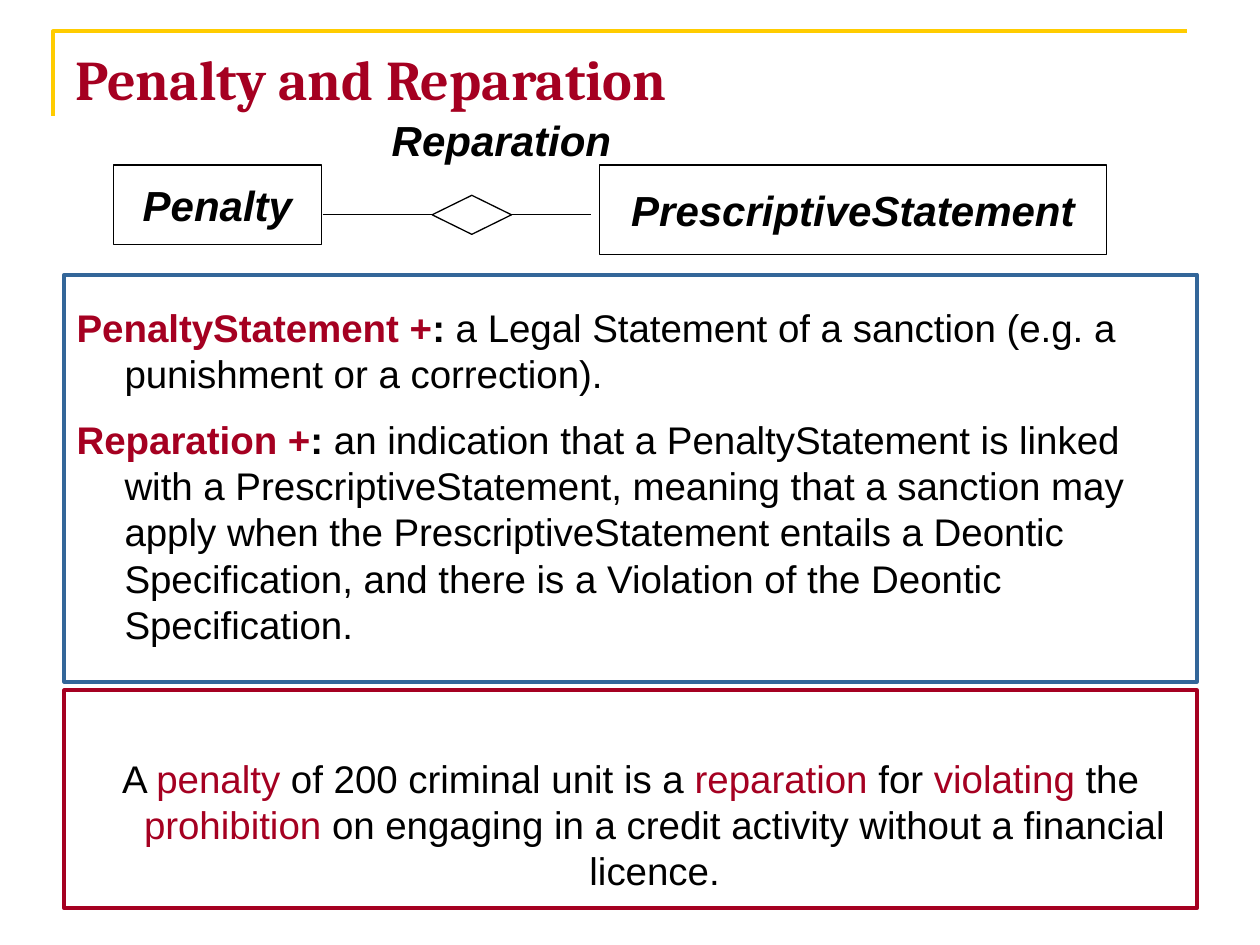
from pptx import Presentation
from pptx.dml.color import RGBColor
from pptx.enum.shapes import MSO_CONNECTOR as LINK, MSO_SHAPE as SHAPE
from pptx.enum.text import MSO_ANCHOR as ANCHOR, PP_ALIGN as ALIGN
from pptx.oxml.ns import qn
from pptx.util import Inches, Pt

RED, BLUE, GOLD, BLACK, WHITE = "A50021", "336699", "FFCC00", "000000", "FFFFFF"

TITLE = "Penalty and Reparation"
NODES = [  # text, left, top, width, height
    ("Penalty", 0.9, 1.31, 1.65, 0.63),
    ("PrescriptiveStatement", 4.76, 1.31, 4.02, 0.71),
]
LABEL = ("Reparation", 3.01, 0.86, 1.94, 0.5)
DIAMOND = (3.43, 1.55, 0.63, 0.31)
LINKS = [(2.56, 3.43), (4.06, 4.69)]
LINK_Y = 1.7

# Each run is text, colour, bold
TERMS = [
    [("PenaltyStatement +", RED, True), (":", BLACK, True),
     (" a Legal Statement of a sanction (e.g. a punishment or a correction).",
      BLACK, False)],
    [("Reparation +", RED, True), (":", BLACK, True),
     (" an indication that a PenaltyStatement is linked with a "
      "PrescriptiveStatement, meaning that a sanction may apply when the "
      "PrescriptiveStatement entails a Deontic Specification, and there is a "
      "Violation of the Deontic Specification.", BLACK, False)],
]
EXAMPLE = [[
    ("A ", BLACK, False), ("penalty", RED, False),
    (" of 200 criminal unit is a ", BLACK, False), ("reparation", RED, False),
    (" for ", BLACK, False), ("violating", RED, False),
    (" the ", BLACK, False), ("prohibition", RED, False),
    (" on engaging in a credit activity without a financial licence.",
     BLACK, False),
]]
PANELS = [  # paragraphs, top, height, line colour, alignment, top inset
    (TERMS, 2.18, 3.23, BLUE, ALIGN.LEFT, 0.23),
    (EXAMPLE, 5.48, 1.73, RED, ALIGN.CENTER, 0.51),
]


def rgb(text):
    return RGBColor.from_string(text)


def style(run, size, color, bold=True, italic=False, face="Arial"):
    font = run.font
    font.name, font.size = face, Pt(size)
    font.bold, font.italic = bold, italic
    font.color.rgb = rgb(color)


def outline(shape, color, width, fill=None):
    shape.shadow.inherit = False
    shape.line.color.rgb = rgb(color)
    shape.line.width = Pt(width)
    if fill:
        shape.fill.solid()
        shape.fill.fore_color.rgb = rgb(fill)
    else:
        shape.fill.background()


def add_box(kind, place, color, width, fill=None):
    shape = slide.shapes.add_shape(kind, *map(Inches, place))
    outline(shape, color, width, fill)
    return shape


def set_name(shape, text):
    """Write a centred bold italic name on one line."""
    frame = shape.text_frame
    frame.text = text
    frame.word_wrap = False
    para = frame.paragraphs[0]
    para.alignment = ALIGN.CENTER
    style(para.runs[0], 24, BLACK, italic=True)


def add_panel(paras, top, height, color, align, inset):
    box = add_box(SHAPE.RECTANGLE, (0.51, top, 8.99, height), color, 2.25)
    frame = box.text_frame
    frame.word_wrap = True
    frame.vertical_anchor = ANCHOR.TOP
    frame.margin_top = Inches(inset)
    for i, parts in enumerate(paras):
        para = frame.add_paragraph() if i else frame.paragraphs[0]
        para.alignment = align
        para.space_before = Pt(11.5 if i else 0)
        props = para._p.get_or_add_pPr()
        props.set("marL", str(Inches(0.38)))
        props.set("indent", str(-Inches(0.38)))
        for text, tint, bold in parts:
            run = para.add_run()
            run.text = text
            style(run, 22, tint, bold)


prs = Presentation()
prs.slide_width, prs.slide_height = Inches(10), Inches(7.5)
slide = prs.slides.add_slide(prs.slide_layouts[6])

pen = slide.shapes.build_freeform(Inches(0.42), Inches(0.92))
pen.add_line_segments([(Inches(0.42), Inches(0.25)),
                       (Inches(9.42), Inches(0.25))], close=False)
outline(pen.convert_to_shape(), GOLD, 2.25)

title = slide.shapes.add_textbox(*map(Inches, (0.5, 0.3, 9, 1.25))).text_frame
title.text = TITLE
title.word_wrap = True
style(title.paragraphs[0].runs[0], 32, RED, face="Cambria")

for panel in PANELS:
    add_panel(*panel)

for text, *place in NODES:
    node = add_box(SHAPE.RECTANGLE, place, BLACK, 0.75, WHITE)
    node.text_frame.vertical_anchor = ANCHOR.MIDDLE
    set_name(node, text)

add_box(SHAPE.FLOWCHART_DECISION, DIAMOND, BLACK, 0.75, WHITE)
for start, end in LINKS:
    link = slide.shapes.add_connector(
        LINK.STRAIGHT, *map(Inches, (start, LINK_Y, end, LINK_Y)))
    link.line.color.rgb = rgb(BLACK)
    link.line.width = Pt(0.75)
    props = link._element.spPr
    props.append(props.makeelement(qn("a:effectLst"), {}))

name, *place = LABEL
set_name(slide.shapes.add_textbox(*map(Inches, place)), name)

prs.save("out.pptx")
